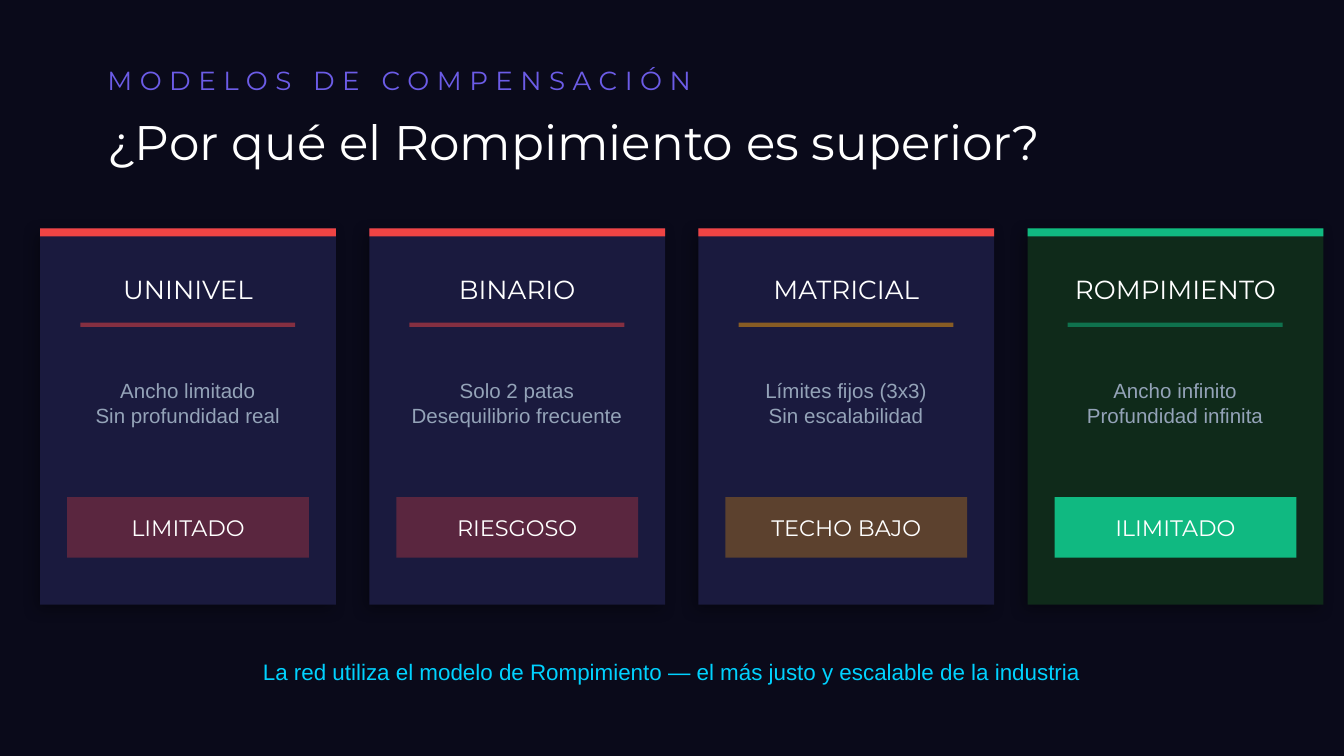
from pptx import Presentation
from pptx.dml.color import RGBColor
from pptx.enum.shapes import MSO_SHAPE as Shape
from pptx.enum.text import MSO_ANCHOR as Anchor, PP_ALIGN as Align
from pptx.oxml import parse_xml
from pptx.oxml.ns import nsdecls, qn
from pptx.util import Cm, Pt

TITLE_FONT, BODY_FONT = "Montserrat", "Arial"
WHITE, GRAY, CYAN, VIOLET = "FFFFFF", "94A3B8", "00D2FF", "6C5CE7"
RED, AMBER, GREEN = "EF4444", "F59E0B", "10B981"
BACKGROUND, NAVY, DARK_GREEN = "0A0A1A", "1A1A3E", "0F2A1A"

SHADOW = (
    f'<a:effectLst {nsdecls("a")}>'
    f'<a:outerShdw blurRad="{Pt(8)}" dist="{Pt(3)}" dir="{135 * 60000}" '
    'algn="bl" rotWithShape="0"><a:srgbClr val="000000">'
    '<a:alpha val="35000"/></a:srgbClr></a:outerShdw></a:effectLst>'
)


def color(value):
    return RGBColor.from_string(value)


class SlideBuilder:
    """Holds the text style and the current slide."""

    frame_format = {"word_wrap": True, "vertical_anchor": Anchor.MIDDLE}
    no_margins = dict.fromkeys(
        ("margin_left", "margin_top", "margin_right", "margin_bottom"), 0)

    def __init__(self, presentation):
        self.slide = presentation.slides.add_slide(presentation.slide_layouts[6])
        fill = self.slide.background.fill
        fill.solid()
        fill.fore_color.rgb = color(BACKGROUND)

    def rectangle(self, box, fill, opacity=100, shadow=False):
        shape = self.slide.shapes.add_shape(Shape.RECTANGLE, *map(Cm, box))
        shape.fill.solid()
        shape.fill.fore_color.rgb = color(fill)
        shape.line.fill.background()
        properties = shape._element.spPr
        if opacity < 100:
            alpha = parse_xml(f'<a:alpha {nsdecls("a")} val="{opacity * 1000}"/>')
            properties.find(f'{qn("a:solidFill")}/{qn("a:srgbClr")}').append(alpha)
        if shadow:
            properties.append(parse_xml(SHADOW))
        else:
            shape.shadow.inherit = False

    def text(self, box, lines, size, fill, font=TITLE_FONT, align=Align.CENTER,
             margins=False, spacing=0):
        frame = self.slide.shapes.add_textbox(*map(Cm, box)).text_frame
        frame_format = self.frame_format | ({} if margins else self.no_margins)
        for name, value in frame_format.items():
            setattr(frame, name, value)
        frame.text = lines
        font_format = {"name": font, "size": Pt(size)}
        for paragraph in frame.paragraphs:
            paragraph.alignment = align
            for run in paragraph.runs:
                for name, value in font_format.items():
                    setattr(run.font, name, value)
                run.font.color.rgb = color(fill)
                if spacing:
                    run._r.get_or_add_rPr().set("spc", str(spacing * 100))

    def card(self, left, name, details, verdict, fill, bar, accent, opacity):
        # Panel with its top bar
        self.rectangle((left, 4.32, 5.59, 7.11), fill, shadow=True)
        self.rectangle((left, 4.32, 5.59, 0.15), bar)
        # Name, divider and details
        self.text((left, 4.95, 5.59, 1.02), name, 14, WHITE)
        self.rectangle((left + 0.76, 6.1, 4.06, 0.08), accent, 50)
        self.text((left + 0.25, 6.6, 5.08, 2.03), details, 11, GRAY,
                  BODY_FONT, margins=True)
        # Verdict badge
        badge = (left + 0.51, 9.4, 4.57, 1.14)
        self.rectangle(badge, accent, opacity)
        self.text(badge, verdict, 12, WHITE)


MODELS = [
    ("UNINIVEL", "Ancho limitado\nSin profundidad real", "LIMITADO",
     NAVY, RED, RED, 30),
    ("BINARIO", "Solo 2 patas\nDesequilibrio frecuente", "RIESGOSO",
     NAVY, RED, RED, 30),
    ("MATRICIAL", "Límites fijos (3x3)\nSin escalabilidad", "TECHO BAJO",
     NAVY, RED, AMBER, 30),
    ("ROMPIMIENTO", "Ancho infinito\nProfundidad infinita", "ILIMITADO",
     DARK_GREEN, GREEN, GREEN, 100),
]


def main():
    presentation = Presentation()
    presentation.slide_width, presentation.slide_height = Cm(25.4), Cm(14.29)
    builder = SlideBuilder(presentation)

    # Heading
    builder.text((2.03, 0.76, 15.24, 1.52), "MODELOS DE COMPENSACIÓN", 14, VIOLET,
                 align=Align.LEFT, spacing=4)
    builder.text((2.03, 1.9, 20.32, 1.52), "¿Por qué el Rompimiento es superior?",
                 26, WHITE, align=Align.LEFT)

    # One card per compensation model
    for index, model in enumerate(MODELS):
        builder.card(0.76 + index * 6.22, *model)

    # Closing line
    builder.text((1.27, 12.19, 22.86, 1.02),
                 "La red utiliza el modelo de Rompimiento — "
                 "el más justo y escalable de la industria",
                 12, CYAN, BODY_FONT, margins=True)

    presentation.save("out.pptx")


if __name__ == "__main__":
    main()
